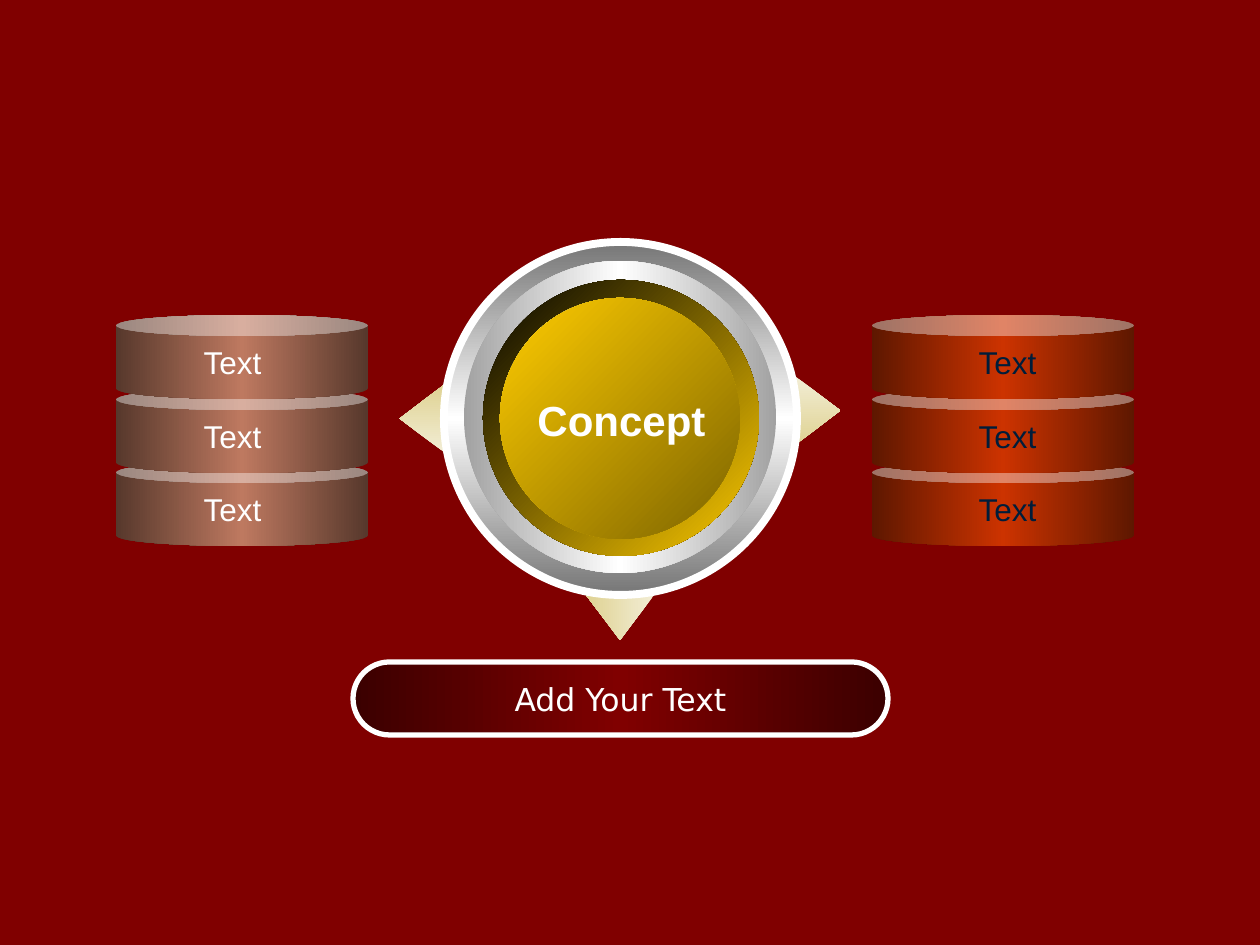
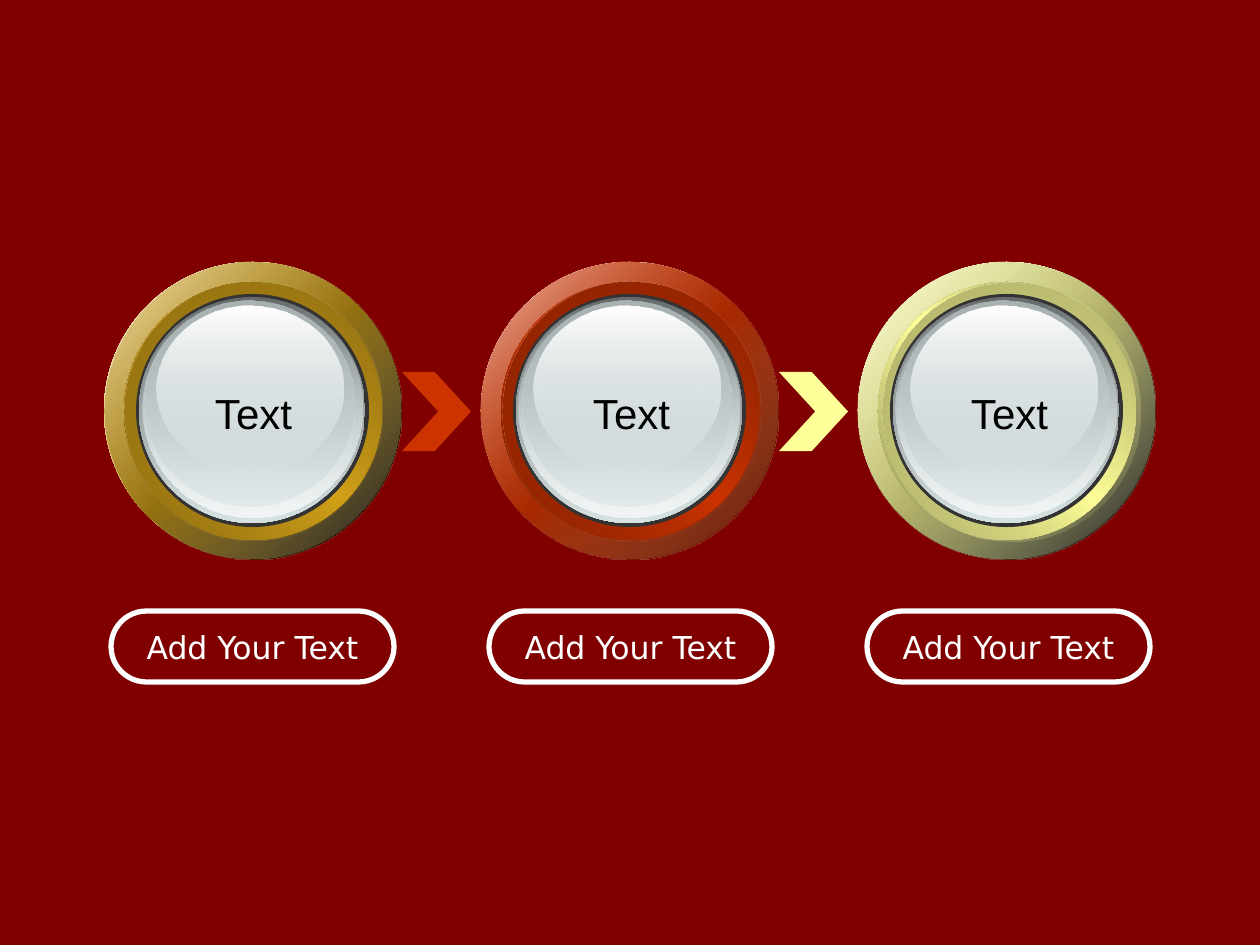
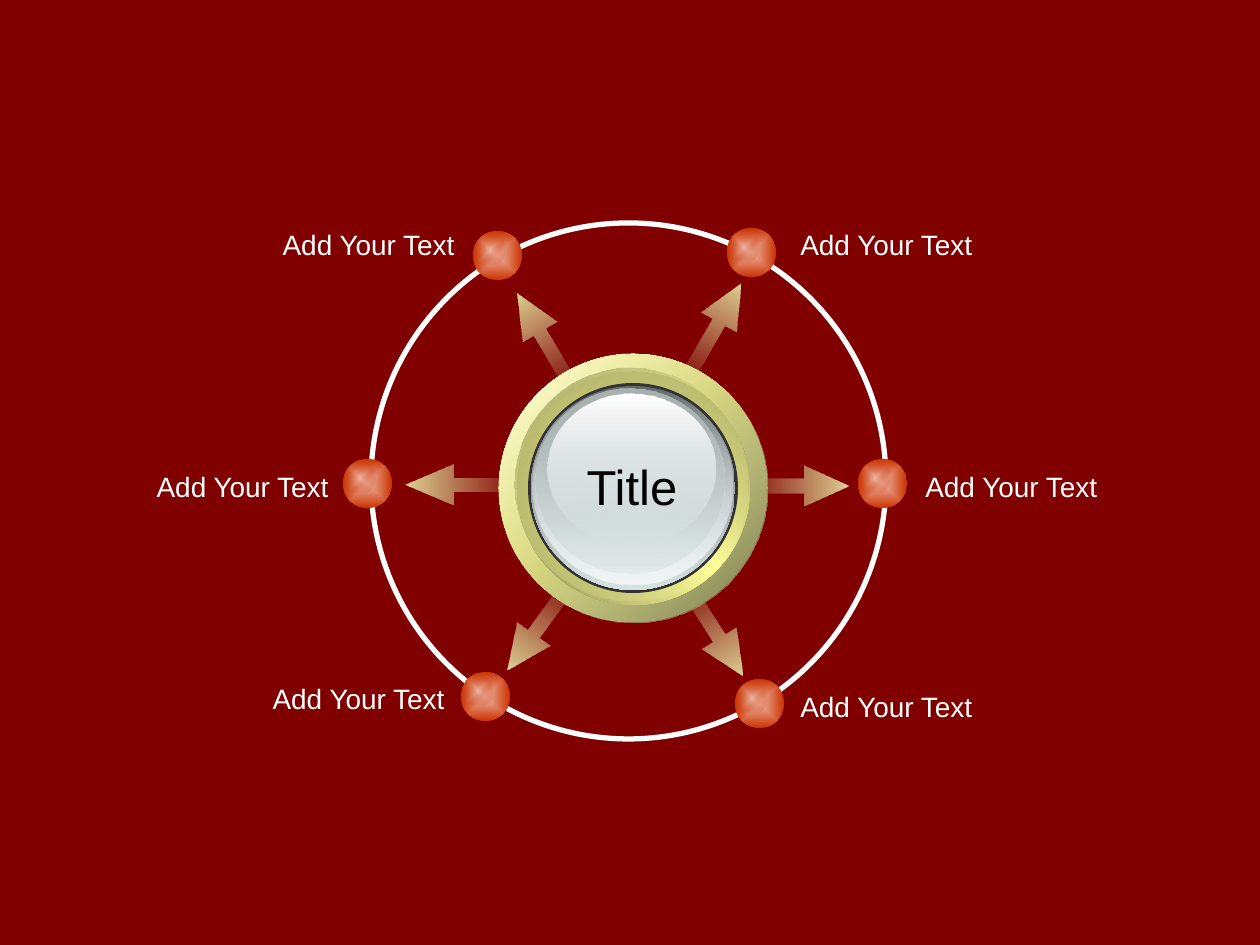
from pptx import Presentation
from pptx import util as u
from pptx.dml import color
from pptx.enum import shapes, text
from pptx.oxml import ns, parse_xml

SCALE = u.Inches(1) / 126
DIAL = 297
KIND = shapes.MSO_SHAPE
ALIGN = text.PP_ALIGN
COLORS = {
    "ground": "800000", "wine": "3B0000", "white": "FFFFFF", "black": "000000",
    "navy": "001D3A", "charcoal": "333333",
    "sand": "DFD293", "cream": "F2EDD4", "straw": "D4C88C",
    "chrome": "767676", "silver": "A2A2A2",
    "amber": "FFCC00", "dark amber": "7D6400",
    "clay": "BE7960", "dark clay": "57382C",
    "red": "CC3300", "red rim": "6F1C00", "red shade": "822000",
    "dark red": "5E1700", "blush": "EDB8A7",
    "gold": "D3A219", "gold rim": "73580E", "gold shade": "866710",
    "yellow": "FFFF99", "yellow rim": "8B8B53", "yellow shade": "A2A261",
    "olive": "767647",
    "steel": "656A6B", "mist": "AAB3B4", "ice": "D6E1E2", "frost": "F1F5F5",
}


def rgb(name):
    """Return the named colour."""
    return color.RGBColor.from_string(COLORS[name])


def emu(*lengths):
    """Turn px lengths into EMU."""
    return [u.Emu(round(length * SCALE)) for length in lengths]


def gradient(shape, stops, angle):
    """Fill a shape with evenly spaced (name, opacity) stops; no angle means from the centre."""
    marks = ""
    for index, stop in enumerate(stops):
        name, opacity = stop if isinstance(stop, tuple) else (stop, 100)
        place = 100000 * index // (len(stops) - 1)
        marks += (f'<a:gs pos="{place}"><a:srgbClr val="{COLORS[name]}">'
                  f'<a:alpha val="{opacity * 1000}"/></a:srgbClr></a:gs>')
    if angle is None:
        course = ('<a:path path="shape"><a:fillToRect l="50000" t="50000" '
                  'r="50000" b="50000"/></a:path>')
    else:
        course = f'<a:lin ang="{angle * 60000}" scaled="0"/>'
    shape.fill.background()
    properties = shape.element.spPr
    properties.replace(properties.find(ns.qn("a:noFill")), parse_xml(
        f'<a:gradFill {ns.nsdecls("a")} rotWithShape="1">'
        f'<a:gsLst>{marks}</a:gsLst>{course}</a:gradFill>'))


def add_figure(page, kind, box, fill=None, angle=0, line=0, turn=0, adjust=()):
    """Add a preset shape with a plain, gradient or empty fill."""
    shape = page.shapes.add_shape(kind, *emu(*box))
    shape.shadow.inherit = False
    shape.rotation = turn
    for index, value in enumerate(adjust):
        shape.adjustments[index] = value
    if fill is None:
        shape.fill.background()
    elif isinstance(fill, str):
        shape.fill.solid()
        shape.fill.fore_color.rgb = rgb(fill)
    else:
        gradient(shape, fill, angle)
    if line:
        shape.line.width = u.Pt(line)
        shape.line.color.rgb = rgb("white")
    else:
        shape.line.fill.background()
    return shape


def write(shape, words, size, ink="white", align=ALIGN.CENTER, font="Arial", bold=False):
    """Put one line of text in a shape."""
    shape.text_frame.word_wrap = False
    para = shape.text_frame.paragraphs[0]
    para.alignment = align
    span = para.add_run()
    span.text = words
    for key, value in {"name": font, "size": u.Pt(size), "bold": bold}.items():
        setattr(span.font, key, value)
    span.font.color.rgb = rgb(ink)


def add_label(page, box, words, size, **style):
    """Add a text box that grows with its text."""
    label = page.shapes.add_textbox(*emu(*box))
    label.text_frame.auto_size = text.MSO_AUTO_SIZE.SHAPE_TO_FIT_TEXT
    write(label, words, size, **style)


def add_pill(page, box, fill=None):
    """Add an outlined pill with its caption."""
    pill = add_figure(page, KIND.ROUNDED_RECTANGLE, box, fill, line=3, adjust=[0.5])
    pill.text_frame.vertical_anchor = text.MSO_ANCHOR.MIDDLE
    write(pill, "Add Your Text", 18, font="DejaVu Sans")


def add_stack(page, left, width, edge, middle, text_left, ink):
    """Add three stacked drums with their labels."""
    tops = [315, 389, 462]
    for top in reversed(tops):
        add_figure(page, KIND.CAN, (left, top, width, 84), [edge, middle, edge], adjust=[0.25])
    for top in tops:
        add_label(page, (text_left, top + 22, 87, 50), "Text", 18, ink=ink)


def add_dial(page, left, top, hue, shade_end, size=DIAL, shift=(0, 0)):
    """Add a bevelled ring around a glass button."""
    rim, shade = f"{hue} rim", f"{hue} shade"
    layers = [
        ((0, 0, 297, 297), ["white", hue, "white"], 45),
        ((0, 0, 297, 297), [(hue, 32), shade_end], 45),
        ((20, 20, 258, 258), [rim, hue, rim], 315),
        ((20 + shift[0], 20 + shift[1], 258, 258), [shade, (hue, 0)], 45),
        ((32, 32, 233, 233), "charcoal", 0),
        ((35, 35, 226, 226), ["steel", "ice"], 90),
        ((38, 36, 220, 220), [("ice", 0), "frost"], 90),
        ((41, 39, 209, 205), ["mist", ("ice", 48)], 90),
        ((53, 44, 186, 166), ["white", ("ice", 38)], 90),
    ]
    for box, fill, angle in layers:
        x, y, width, height = [round(length * size / DIAL) for length in box]
        add_figure(page, KIND.OVAL, (left + x, top + y, width, height), fill, angle)


def add_bulb(page, left, top):
    """Add a glowing knob with its glint."""
    add_figure(page, KIND.OVAL, (left, top, 49, 49), ["blush", "red"], None)
    add_figure(page, KIND.OVAL, (left + 2, top + 4, 30, 31), ["blush", ("red", 0)], None)


def build_concept(page):
    """Build the concept disc between two stacks."""
    for left, top, turn in [(388, 396, 270), (784, 388, 90), (586, 595, 180)]:
        add_figure(page, KIND.UP_ARROW, (left, top, 68, 45), ["cream", "sand"],
                   turn=turn, adjust=[0.517, 1])
    discs = [
        ((444, 242, 353, 353), ["chrome", "white", "chrome"], 90, 4.5),
        ((464, 261, 312, 312), ["silver", "white", "silver"], 0, 0),
        ((483, 280, 276, 276), ["white", "yellow", "white"], 45, 0),
        ((483, 280, 276, 276), ["black", "amber"], 45, 0),
        ((500, 298, 240, 241), ["yellow rim", "yellow", "yellow rim"], 315, 0),
        ((500, 298, 240, 241), ["amber", "dark amber"], 45, 0),
    ]
    for box, fill, angle, line in discs:
        add_figure(page, KIND.OVAL, box, fill, angle, line)
    add_stack(page, 116, 252, "dark clay", "clay", 189, "white")
    add_stack(page, 872, 262, "dark red", "red", 964, "navy")
    add_label(page, (525, 388, 193, 63), "Concept", 24, bold=True)
    add_pill(page, (353, 662, 535, 73), ["wine", "ground", "wine"])


def build_steps(page):
    """Build three dials joined by chevrons."""
    for index, hue in enumerate(["red", "yellow"]):
        add_figure(page, KIND.CHEVRON, (402 + 377 * index, 372, 69, 79), hue, adjust=[0.525])
    dials = [("gold", ("black", 90), (0, 0)), ("red", "dark red", (1, 0)),
             ("yellow", ("black", 90), (4, 1))]
    for index, (hue, shade_end, shift) in enumerate(dials):
        add_dial(page, 104 + 377 * index, 262, hue, shade_end, shift=shift)
        add_pill(page, (111 + 378 * index, 611, 283, 71))
        add_label(page, (200 + 378 * index, 381, 107, 63), "Text", 24, ink="black")


def build_orbit(page):
    """Build the title dial with six knobs on its orbit."""
    arrows = [(658, 311, 110, 299.6), (658, 609, 110, 57.8), (490, 321, 110, 239.5),
              (485, 605, 110, 125.6), (738, 466, 110, 0), (406, 465, 118, 180)]
    for left, top, width, turn in arrows:
        add_figure(page, KIND.RIGHT_ARROW, (left, top, width, 40), [("straw", 0), "sand"],
                   turn=turn, adjust=[0.352, 1.11 * width / 110])
    add_figure(page, KIND.OVAL, (371, 223, 515, 516), line=3)
    knobs = [
        ((473, 231), (263, 221), ALIGN.RIGHT), ((343, 459), (137, 463), ALIGN.RIGHT),
        ((461, 672), (253, 675), ALIGN.RIGHT), ((727, 228), (788, 221), ALIGN.LEFT),
        ((858, 459), (913, 463), ALIGN.LEFT), ((735, 679), (788, 683), ALIGN.LEFT),
    ]
    for bulb, place, align in knobs:
        add_bulb(page, *bulb)
        add_label(page, (*place, 204, 47), "Add Your Text", 16, align=align)
    add_dial(page, 499, 354, "yellow", "olive", size=268, shift=(-3, -4))
    add_label(page, (573, 450, 118, 72), "Title", 28, ink="black")


def main():
    """Build and save the deck."""
    deck = Presentation()
    deck.slide_width, deck.slide_height = emu(1260, 945)
    ground = deck.slide_master.background.fill
    ground.solid()
    ground.fore_color.rgb = rgb("ground")
    for build in (build_concept, build_steps, build_orbit):
        build(deck.slides.add_slide(deck.slide_layouts[6]))
    deck.save("out.pptx")


if __name__ == "__main__":
    main()
